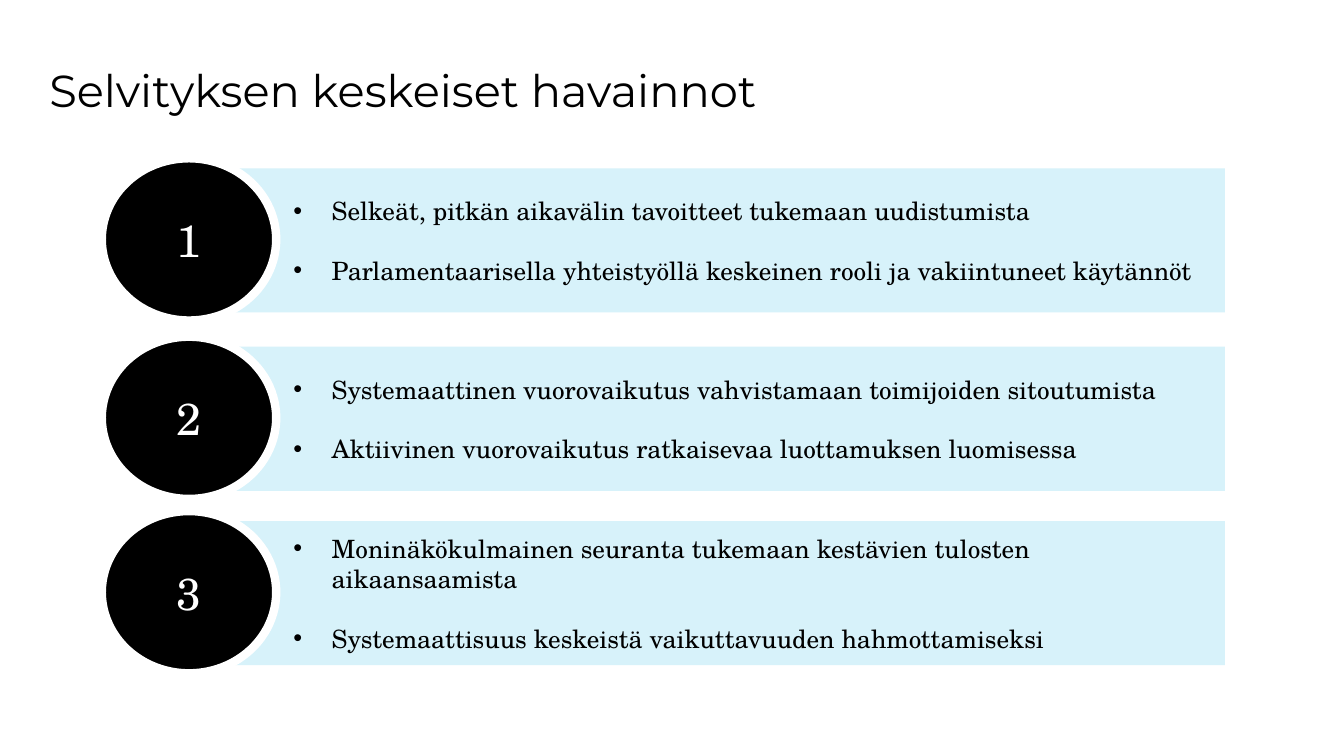
from dataclasses import dataclass

from lxml.etree import SubElement
from pptx import Presentation
from pptx.dml.color import RGBColor
from pptx.enum.shapes import MSO_SHAPE
from pptx.enum.text import MSO_ANCHOR, PP_ALIGN
from pptx.oxml.ns import qn
from pptx.slide import Slide
from pptx.text.text import _Paragraph as Paragraph
from pptx.util import Emu, Pt

EMU_PER_PX = 9144  # 100 px to the inch
BLACK, WHITE, PALE_BLUE = "000000", "FFFFFF", "D7F2FA"
TITLE_FONT, BODY_FONT = "Montserrat", "TeX Gyre Schola"
BULLET_INDENT = 38


@dataclass(frozen=True)
class Finding:
    number: int
    top: int
    points: tuple[str, ...]


FINDINGS = (
    Finding(1, 167, (
        "Selkeät, pitkän aikavälin tavoitteet tukemaan uudistumista",
        "Parlamentaarisella yhteistyöllä keskeinen rooli ja vakiintuneet käytännöt",
    )),
    Finding(2, 344, (
        "Systemaattinen vuorovaikutus vahvistamaan toimijoiden sitoutumista",
        "Aktiivinen vuorovaikutus ratkaisevaa luottamuksen luomisessa",
    )),
    Finding(3, 517, (
        "Moninäkökulmainen seuranta tukemaan kestävien tulosten aikaansaamista",
        "Systemaattisuus keskeistä vaikuttavuuden hahmottamiseksi",
    )),
)


def px(length: int) -> Emu:
    return Emu(length * EMU_PER_PX)


def color(value: str) -> RGBColor:
    return RGBColor.from_string(value)


def style(paragraph: Paragraph, font_name: str, size: int, font_color: str) -> None:
    for run in paragraph.runs:
        run.font.name = font_name
        run.font.size = Pt(size)
        run.font.color.rgb = color(font_color)


def add_bullet(paragraph: Paragraph) -> None:
    properties = paragraph._p.get_or_add_pPr()
    properties.set("marL", str(px(BULLET_INDENT)))
    properties.set("indent", str(-px(BULLET_INDENT)))
    bullet_color = SubElement(properties, qn("a:buClr"))
    SubElement(bullet_color, qn("a:srgbClr"), val=BLACK)
    SubElement(properties, qn("a:buFont"), typeface="Arial")
    SubElement(properties, qn("a:buChar"), char="•")


def add_title(slide: Slide, text: str) -> None:
    text_frame = slide.shapes.add_textbox(px(39), px(57), px(1255), px(109)).text_frame
    text_frame.word_wrap = True
    text_frame.text = text
    style(text_frame.paragraphs[0], TITLE_FONT, 32, BLACK)


def add_band(slide: Slide, finding: Finding) -> None:
    band = slide.shapes.add_shape(
        MSO_SHAPE.RECTANGLE, px(149), px(finding.top), px(1066), px(143))
    band.shadow.inherit = False
    band.fill.solid()
    band.fill.fore_color.rgb = color(PALE_BLUE)
    band.line.fill.background()

    text_frame = band.text_frame
    text_frame.word_wrap = True
    text_frame.vertical_anchor = MSO_ANCHOR.MIDDLE
    text_frame.margin_left, text_frame.margin_right = px(142), px(10)
    text_frame.margin_top = text_frame.margin_bottom = px(5)
    text_frame.text = "\n".join(finding.points)
    for index, paragraph in enumerate(text_frame.paragraphs):
        add_bullet(paragraph)
        paragraph.alignment = PP_ALIGN.LEFT
        if index:
            paragraph.space_before = Pt(21)
        style(paragraph, BODY_FONT, 18, BLACK)


def add_number(slide: Slide, finding: Finding) -> None:
    circle = slide.shapes.add_shape(
        MSO_SHAPE.OVAL, px(101), px(finding.top - 10), px(173), px(161))
    circle.shadow.inherit = False
    circle.fill.solid()
    circle.fill.fore_color.rgb = color(BLACK)
    circle.line.color.rgb = color(WHITE)
    circle.line.width = Pt(6)

    text_frame = circle.text_frame
    text_frame.vertical_anchor = MSO_ANCHOR.MIDDLE
    text_frame.text = str(finding.number)
    paragraph = text_frame.paragraphs[0]
    paragraph.alignment = PP_ALIGN.CENTER
    style(paragraph, BODY_FONT, 32, WHITE)


def main() -> None:
    presentation = Presentation()
    presentation.slide_width, presentation.slide_height = px(1333), px(750)
    slide = presentation.slides.add_slide(presentation.slide_layouts[6])

    # Heading
    add_title(slide, "Selvityksen keskeiset havainnot")

    # Numbered findings, each circle over the left end of its band
    for finding in FINDINGS:
        add_band(slide, finding)
        add_number(slide, finding)

    presentation.save("out.pptx")


if __name__ == "__main__":
    main()
